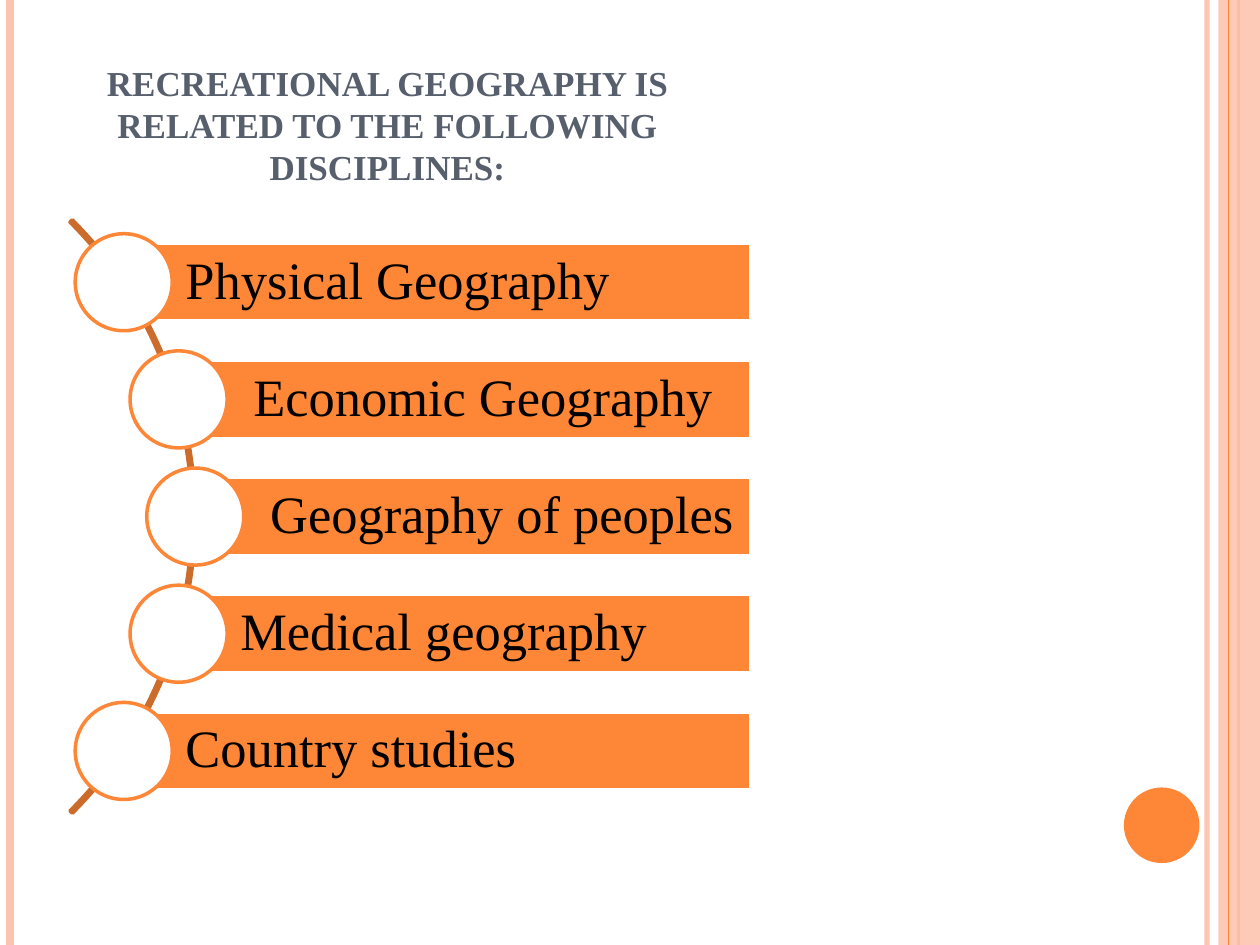
from math import sqrt

from lxml.etree import SubElement
from pptx import Presentation
from pptx.dml.color import RGBColor
from pptx.enum.shapes import MSO_CONNECTOR as Connector, MSO_SHAPE as Shape
from pptx.enum.text import MSO_ANCHOR as Anchor, MSO_AUTO_SIZE as AutoSize, PP_ALIGN as Align
from pptx.oxml.ns import qn
from pptx.util import Inches, Pt

DISCIPLINES = [
    "Physical Geography",
    " Economic Geography",
    " Geography of peoples",
    "Medical geography",
    "Country studies",
]


def paint(color_format, color, opacity=100):
    color_format.rgb = RGBColor.from_string(color)


def set_opacity(fill, percent):
    """Make a solid fill see-through; fill is its a:solidFill parent."""
    color = fill.find(qn("a:solidFill"))[0]
    SubElement(color, qn("a:alpha"), val=str(percent * 1000))


def write(frame, text, size=20, color="000000", font="Times New Roman", bold=False,
          align=Align.LEFT, anchor=Anchor.MIDDLE, spacing=1.0):
    frame.word_wrap = True
    frame.auto_size = AutoSize.NONE
    frame.vertical_anchor = anchor
    paragraph = frame.paragraphs[0]
    paragraph.alignment = align
    paragraph.line_spacing = spacing
    run = paragraph.add_run()
    run.text = text
    run.font.size, run.font.name, run.font.bold = Pt(size), font, bold
    paint(run.font.color, color)


class SlideBuilder:
    ORANGE, PEACH, RUST = "FE8637", "FEC3AE", "CB6B2C"
    WHITE, SLATE = "FFFFFF", "575F6D"

    def __init__(self, slide):
        self.slide = slide

    def stripe(self, x, width, color, opacity=100):
        """Draw a vertical line down the full slide height."""
        line = self.slide.shapes.add_connector(
            Connector.STRAIGHT, Inches(x), 0, Inches(x), Inches(7.5))
        line.line.width = Pt(width)
        paint(line.line.color, color)
        if opacity < 100:
            set_opacity(line.line._ln, opacity)
        SubElement(line._element.spPr, qn("a:effectLst"))

    def shape(self, kind, left, top, width, height, fill=None, outline=None, opacity=100):
        shape = self.slide.shapes.add_shape(
            kind, Inches(left), Inches(top), Inches(width), Inches(height))
        shape.shadow.inherit = False
        if fill:
            shape.fill.solid()
            paint(shape.fill.fore_color, fill)
            if opacity < 100:
                set_opacity(shape._element.spPr, opacity)
        else:
            shape.fill.background()
        if outline:
            shape.line.width = Pt(2)
            paint(shape.line.color, outline)
        else:
            shape.line.fill.background()
        return shape

    def title(self, text):
        title = self.slide.shapes.title
        title.left, title.top = Inches(0.2), Inches(0.29)
        title.width, title.height = Inches(5.75), Inches(1.25)
        write(title.text_frame, text, color=self.SLATE, bold=True,
              align=Align.CENTER, anchor=Anchor.BOTTOM)

    def frame(self):
        self.stripe(9.58, 3, self.PEACH, opacity=93)
        self.stripe(0.08, 4.5, self.PEACH)
        self.stripe(9.83, 1.5, self.ORANGE)
        self.shape(Shape.RECTANGLE, 9.67, 0, 0.33, 7.5, self.PEACH, opacity=87)
        self.stripe(9.75, 0.75, self.ORANGE)
        self.shape(Shape.OVAL, 8.92, 6.25, 0.6, 0.6, self.ORANGE)

    def bar(self, text, left, middle, right=5.96, height=0.62):
        bar = self.shape(Shape.RECTANGLE, left, middle - height / 2,
                         right - left, height, self.ORANGE, self.WHITE)
        frame = bar.text_frame
        frame.margin_left = Inches(0.49)
        frame.margin_top = frame.margin_right = frame.margin_bottom = Inches(0.08)
        write(frame, text, size=30, spacing=0.9)

    def node(self, center, middle, size=0.77):
        self.shape(Shape.OVAL, center - size / 2, middle - size / 2,
                   size, size, self.WHITE, self.ORANGE)

    def curved_list(self, items, center_x=-1.78, center_y=4.1, radius=3.33, pitch=0.93):
        """Place one bar and circle per item along a circular arc."""
        arc = self.shape(Shape.BLOCK_ARC, center_x - radius, center_y - radius,
                         2 * radius, 2 * radius, outline=self.RUST)
        for index, value in enumerate((189, 27, 0.004)):
            arc.adjustments[index] = value
        for index, item in enumerate(items):
            offset = (index - (len(items) - 1) / 2) * pitch
            x = center_x + sqrt(radius ** 2 - offset ** 2)
            self.bar(item, x, center_y + offset)
            self.node(x, center_y + offset)


def main():
    deck = Presentation()
    deck.slide_width, deck.slide_height = Inches(10), Inches(7.5)
    builder = SlideBuilder(deck.slides.add_slide(deck.slide_layouts[5]))
    builder.frame()
    builder.curved_list(DISCIPLINES)
    builder.title("RECREATIONAL GEOGRAPHY IS RELATED TO THE FOLLOWING DISCIPLINES:")
    deck.save("out.pptx")


if __name__ == "__main__":
    main()
